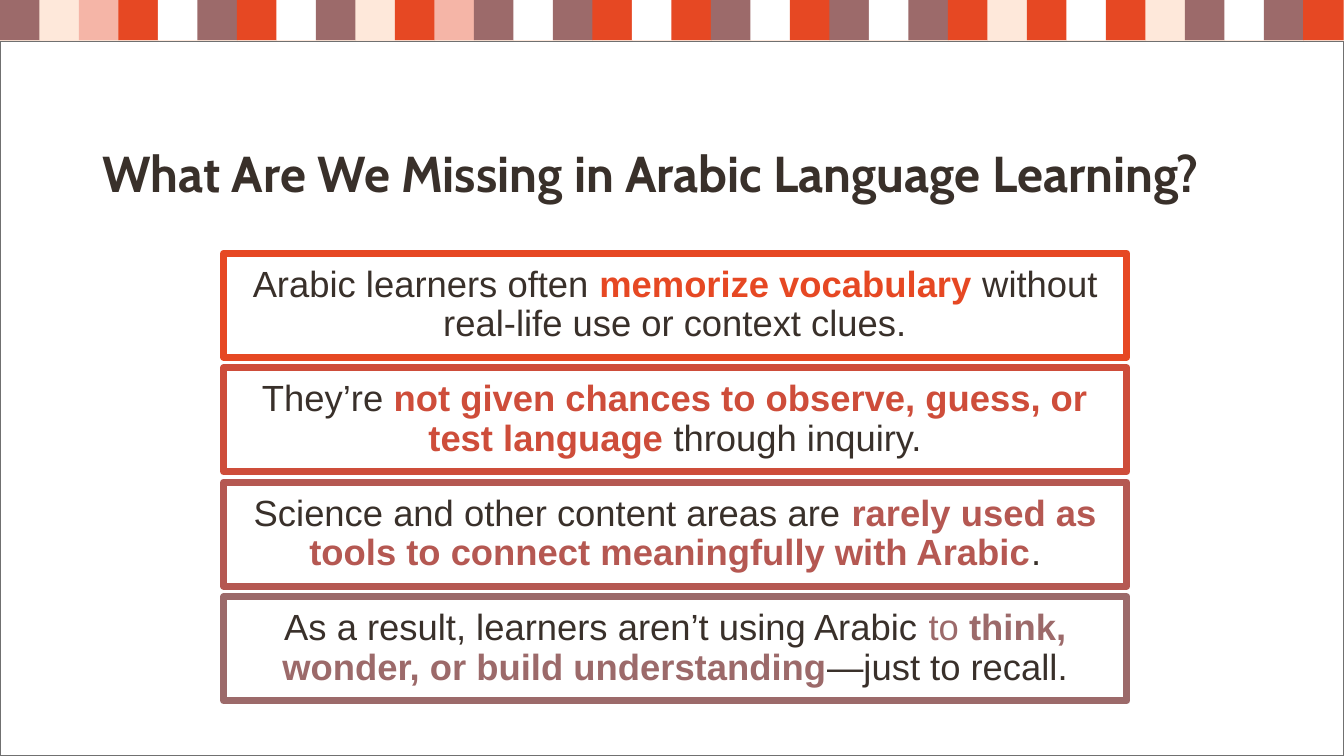
from pptx import Presentation
from pptx.dml.color import RGBColor
from pptx.enum.shapes import MSO_SHAPE
from pptx.enum.text import MSO_ANCHOR, PP_ALIGN
from pptx.util import Pt

# Content
TITLE = "What Are We Missing in Arabic Language Learning?"
STRIPES = "MCPRWMRWMCRPMWMRWRMWRMWMRCRWRCMWMR"
# Each box: accent colour, then runs of (text, accented, bold)
BOXES = [
    ("R", [("Arabic learners often ", False, False),
           ("memorize vocabulary ", True, True),
           ("without real-life use or context clues.", False, False)]),
    ("brick", [("They’re ", False, False),
               ("not given chances to observe, guess, or test language ", True, True),
               ("through inquiry.", False, False)]),
    ("rose", [("Science and other content areas are ", False, False),
              ("rarely used as tools to connect meaningfully with Arabic", True, True),
              (".", False, False)]),
    ("M", [("As a result, learners aren’t using Arabic ", False, False),
           ("to ", True, False),
           ("think, wonder, or build understanding", True, True),
           ("—just to recall.", False, False)]),
]
COLORS = {
    "M": "9C6A6A", "C": "FEE8DA", "P": "F5B5A7", "R": "E64823", "W": "FFFFFF",
    "brick": "CE4D3A", "rose": "B55852", "ink": "39302A", "edge": "707070",
}

# Layout, in points
WIDTH, HEIGHT = 960, 540
STRIPE, STEP = 28.8, 28.21
PANEL_TOP = 29.5
BOX_LEFT, BOX_TOP, BOX_W, BOX_H, PITCH = 159.8, 180.9, 645.1, 74.2, 81.8
INSET = 7.9


def color(name):
    return RGBColor.from_string(COLORS[name])


def add_rect(x, y, w, h, fill=None, line=None, weight=1):
    rect = slide.shapes.add_shape(MSO_SHAPE.RECTANGLE, Pt(x), Pt(y), Pt(w), Pt(h))
    rect.shadow.inherit = False
    if fill:
        rect.fill.solid()
        rect.fill.fore_color.rgb = color(fill)
    else:
        rect.fill.background()
    if line:
        rect.line.color.rgb = color(line)
        rect.line.width = Pt(weight)
    else:
        rect.line.fill.background()
    return rect


def add_run(para, text, font, size, shade, bold):
    run = para.add_run()
    run.text = text
    run.font.name = font
    run.font.size = Pt(size)
    run.font.bold = bold
    run.font.color.rgb = color(shade)


deck = Presentation()
deck.slide_width, deck.slide_height = Pt(WIDTH), Pt(HEIGHT)
slide = deck.slides.add_slide(deck.slide_layouts[6])
slide.background.fill.solid()
slide.background.fill.fore_color.rgb = color("C")

# Striped band and white panel
for i, shade in enumerate(STRIPES):
    add_rect(i * STEP, 0, STRIPE, STRIPE, shade)
add_rect(0, PANEL_TOP, WIDTH, HEIGHT - PANEL_TOP, "W", "edge")

# Title
frame = slide.shapes.add_textbox(Pt(66), Pt(43.9), Pt(828), Pt(104.4)).text_frame
frame.word_wrap = True
frame.vertical_anchor = MSO_ANCHOR.BOTTOM
para = frame.paragraphs[0]
para.line_spacing = 0.8
add_run(para, TITLE, "Cabin", 36, "ink", True)

# Outlined statement boxes
for i, (accent, runs) in enumerate(BOXES):
    box = add_rect(BOX_LEFT, BOX_TOP + i * PITCH, BOX_W, BOX_H, line=accent, weight=5)
    frame = box.text_frame
    frame.word_wrap = True
    frame.vertical_anchor = MSO_ANCHOR.MIDDLE
    frame.margin_left = frame.margin_right = Pt(INSET)
    frame.margin_top = frame.margin_bottom = Pt(INSET)
    para = frame.paragraphs[0]
    para.alignment = PP_ALIGN.CENTER
    para.line_spacing = 0.9
    for text, marked, bold in runs:
        add_run(para, text, "Arial", 26, accent if marked else "ink", bold)

deck.save("out.pptx")
